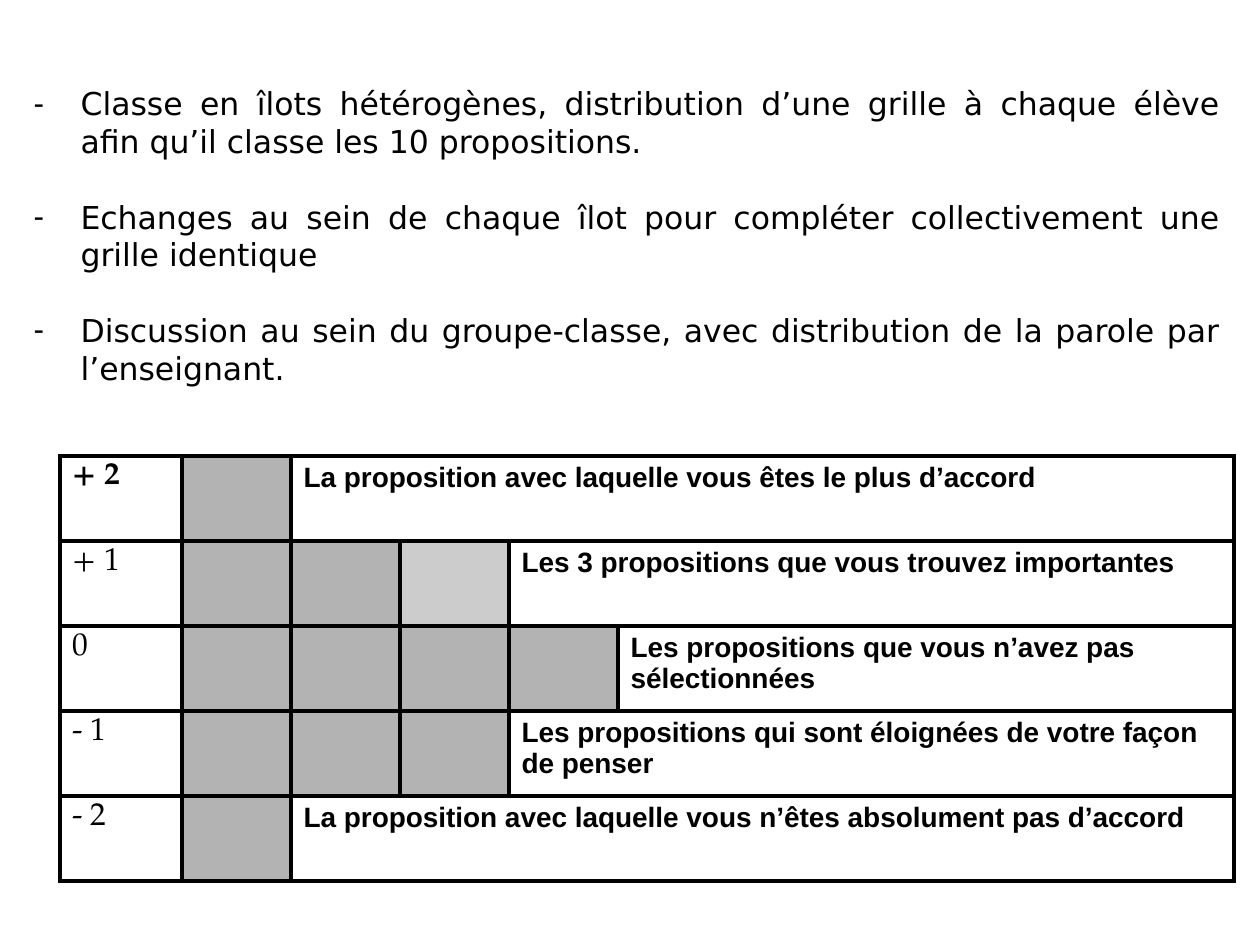
import pptx
import pptx.util
import pptx.dml.color
import pptx.enum.text
import pptx.oxml
import pptx.oxml.ns

SCALE = 914400 / 126
COLORS = {"ink": "000000", "paper": "FFFFFF", "gray": "B3B3B3", "light": "CCCCCC"}
STEPS = [
    "Classe en îlots hétérogènes, distribution d’une grille à chaque élève afin qu’il classe les 10 propositions.",
    "Echanges au sein de chaque îlot pour compléter collectivement une grille identique",
    "Discussion au sein du groupe-classe, avec distribution de la parole par l’enseignant.",
]
# Score, shades of the boxes to fill in, meaning of the score
ROWS = [
    ("+ 2", ["gray"], "La proposition avec laquelle vous êtes le plus d’accord"),
    ("+ 1", ["gray", "gray", "light"], "Les 3 propositions que vous trouvez importantes"),
    ("0", ["gray"] * 4, "Les propositions que vous n’avez pas sélectionnées"),
    ("- 1", ["gray"] * 3, "Les propositions qui sont éloignées de votre façon de penser"),
    ("- 2", ["gray"], "La proposition avec laquelle vous n’êtes absolument pas d’accord"),
]
WIDTHS = [122] + [109] * 4 + [616]
HEIGHT = 85


def px(n):
    return pptx.util.Emu(round(n * SCALE))


def color(name):
    return pptx.dml.color.RGBColor.from_string(COLORS[name])


def write(para, text, font="Arial", size=18, bold=False, ink="ink"):
    run = para.add_run()
    run.text = text
    run.font.name = font
    run.font.size = pptx.util.Pt(size)
    run.font.bold = bold
    run.font.color.rgb = color(ink)


def bullet(para, mark, indent):
    props = para._p.get_or_add_pPr()
    props.set("marL", str(px(indent)))
    props.set("indent", str(-px(indent)))
    char = props.makeelement(pptx.oxml.ns.qn("a:buChar"), {"char": mark})
    props.append(char)


def border(cell, width=2.25):
    props = cell._tc.get_or_add_tcPr()
    for side in "LRTB":
        props.append(pptx.oxml.parse_xml(
            f'<a:ln{side} {pptx.oxml.ns.nsdecls("a")} w="{pptx.util.Pt(width)}">'
            f'<a:solidFill><a:srgbClr val="{COLORS["ink"]}"/></a:solidFill></a:ln{side}>'))


def shade(cell, name):
    cell.fill.solid()
    cell.fill.fore_color.rgb = color(name)


def add_steps(slide):
    body = slide.placeholders[1]
    body.left, body.top, body.width, body.height = px(21), px(78), px(1212), px(318)
    frame = body.text_frame
    frame.word_wrap = True
    frame.auto_size = pptx.enum.text.MSO_AUTO_SIZE.NONE
    frame.vertical_anchor = pptx.enum.text.MSO_ANCHOR.TOP
    pitch = pptx.util.Pt(21.6)
    for i, step in enumerate(STEPS):
        para = frame.add_paragraph() if i else frame.paragraphs[0]
        para.alignment = pptx.enum.text.PP_ALIGN.JUSTIFY
        para.line_spacing = pitch
        para.space_before = pptx.util.Pt(0)
        para.space_after = pitch
        bullet(para, "-", 47)
        write(para, step, font="DejaVu Sans")


def add_grid(slide):
    frame = slide.shapes.add_table(
        len(ROWS), len(WIDTHS), px(60), px(456), px(sum(WIDTHS)), px(HEIGHT * len(ROWS)))
    table = frame.table
    table.first_row = table.horz_banding = False
    for col, width in zip(table.columns, WIDTHS):
        col.width = px(width)
    last = len(WIDTHS) - 1
    for r, (score, shades, label) in enumerate(ROWS):
        table.rows[r].height = px(HEIGHT)
        start = len(shades) + 1
        fills = ["paper"] + shades + ["paper"] * (len(WIDTHS) - start)
        for c, name in enumerate(fills):
            border(table.cell(r, c))
            shade(table.cell(r, c), name)
        if start < last:
            table.cell(r, start).merge(table.cell(r, last))
        write(table.cell(r, 0).text_frame.paragraphs[0], score,
              font="TeX Gyre Pagella", bold=r == 0)
        write(table.cell(r, start).text_frame.paragraphs[0], label, size=16, bold=True)


def main():
    deck = pptx.Presentation()
    deck.slide_width, deck.slide_height = px(1260), px(945)
    slide = deck.slides.add_slide(deck.slide_layouts[1])
    title = slide.shapes.title._element
    title.getparent().remove(title)
    add_steps(slide)
    add_grid(slide)
    deck.save("out.pptx")


if __name__ == "__main__":
    main()
